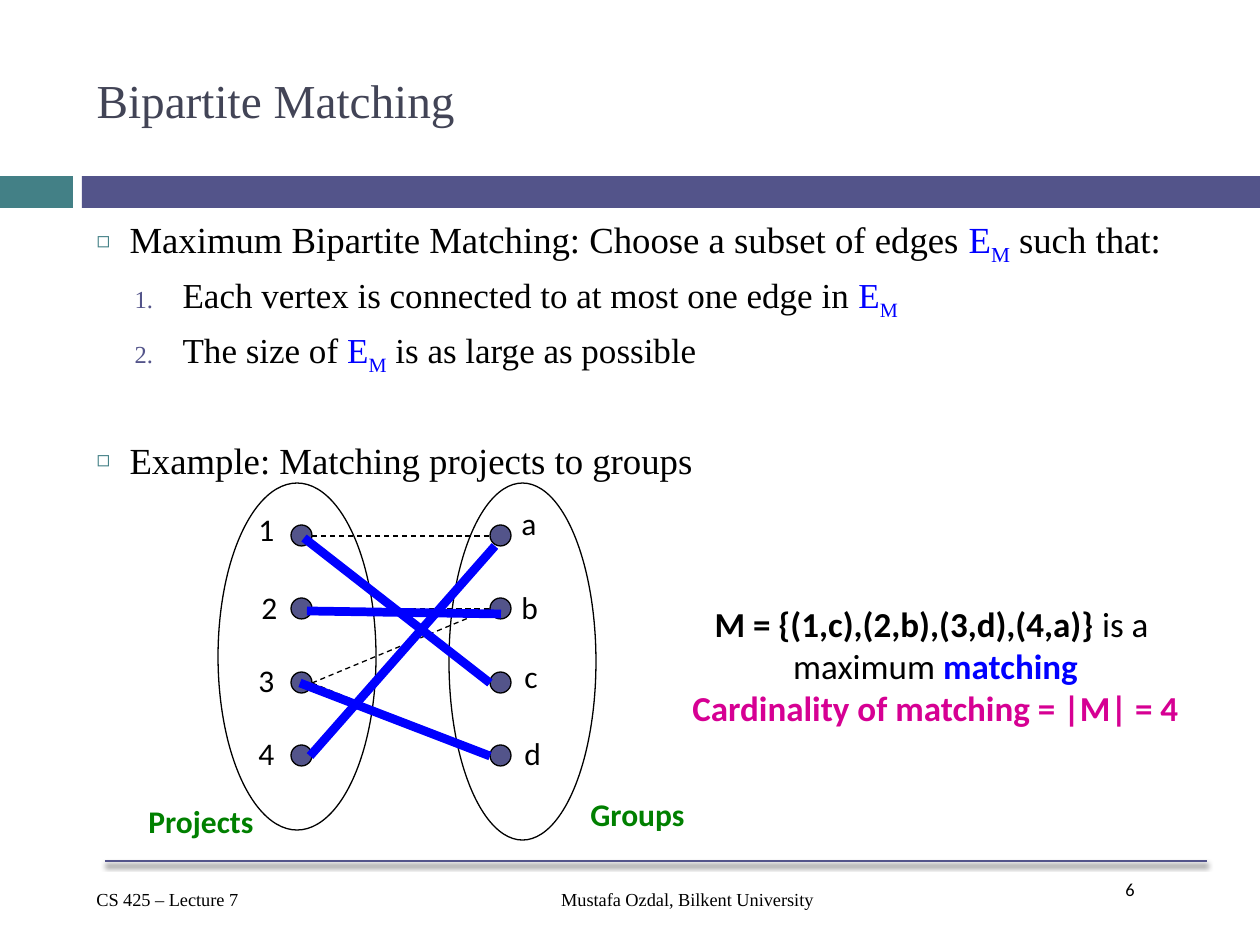
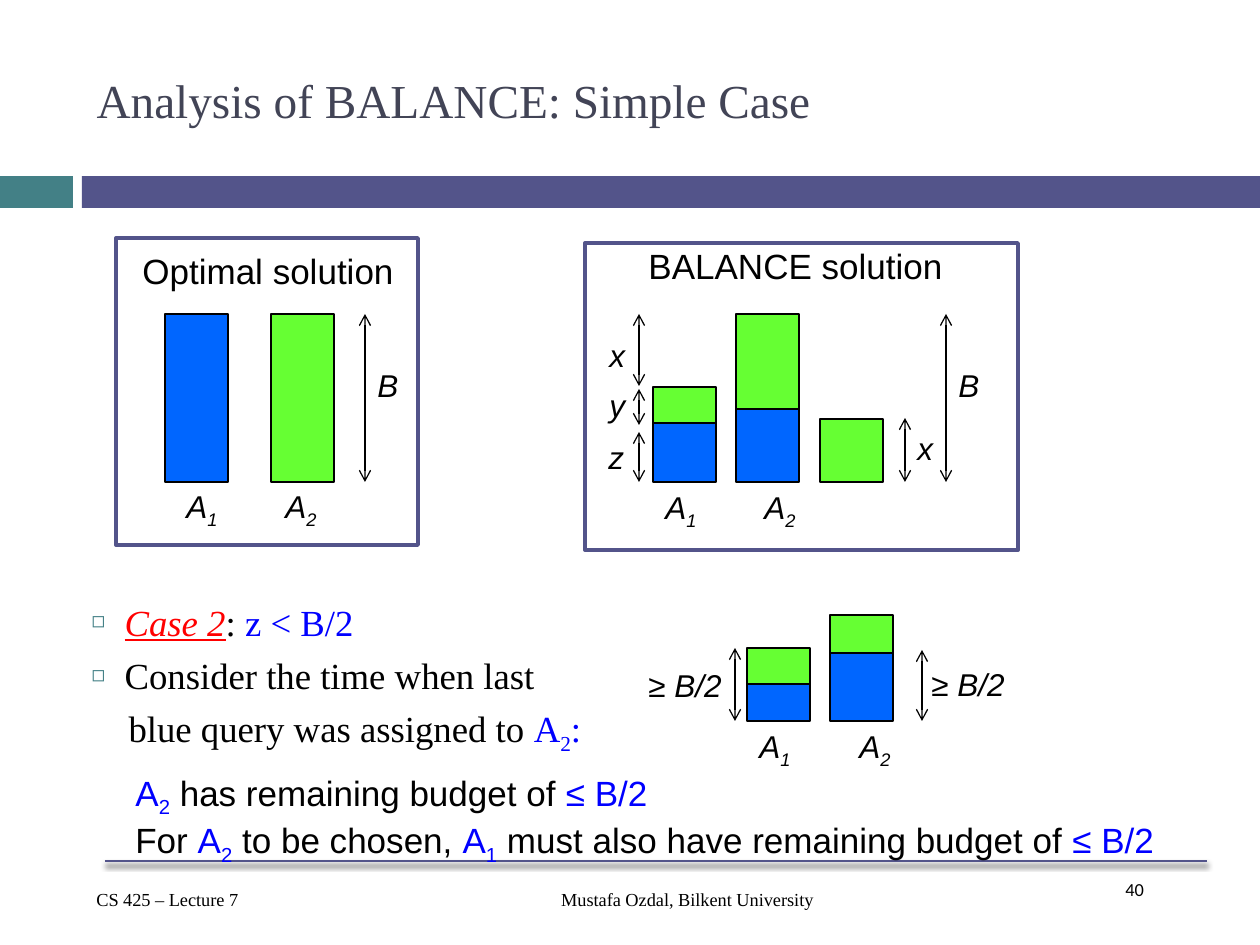
from dataclasses import dataclass
from typing import Any

from lxml import etree
from pptx import Presentation
from pptx import util as u
from pptx.dml.color import RGBColor
from pptx.enum import dml, shapes, text
from pptx.oxml import ns

PX = 914400 / 126
SERIF, SANS, LABEL = "Times New Roman", "Arial", "Calibri"
BLACK, INDIGO, TEAL, SLATE = "000000", "53548A", "438086", "424456"
BLUE, RED, DARK_GREEN, MAGENTA = "0000FF", "FF0000", "008000", "D60093"
BAR_BLUE, BAR_GREEN = "0066FF", "66FF33"
IN_BLUE = {"color": BLUE}
BLUE_SUB = {"color": BLUE, "sub": True}
BULLET = {"left": 33, "hang": 33, "before": 5.2, "size": 21, "mark": "◻"}
NUMBER = {"left": 86, "hang": 48, "before": 4.1, "size": 20, "level": 1}


def px(length):
    """Turn px into EMU."""
    return u.Emu(round(length * PX))


def rgb(code):
    """Turn a hex string into a colour."""
    return RGBColor.from_string(code)


def child(parent, tag, **attributes):
    """Append a DrawingML element to parent."""
    return etree.SubElement(parent, ns.qn("a:" + tag), attributes)


def add_runs(paragraph, runs, **base):
    """Add (words, style) runs, each style overriding the base style."""
    for words, style in runs:
        look = {"color": BLACK, **base, **style}
        run = paragraph.add_run()
        run.text = words
        run.font.name = look["font"]
        run.font.size = u.Pt(look["size"])
        run.font.color.rgb = rgb(look["color"])
        run.font.bold = look.get("bold", False)
        run.font.italic = look.get("italic", False)
        run.font.underline = look.get("underline", False)
        if look.get("sub"):
            run.font._element.set("baseline", "-25000")


def plain(words):
    """Make a single unstyled paragraph."""
    return [[(words, {})]]


@dataclass
class Region:
    """A part of a slide that places shapes relative to its corner."""
    slide: Any
    left: int
    top: int

    def place(self, x, y, width, height):
        """Give the EMU box of a part."""
        return px(self.left + x), px(self.top + y), px(width), px(height)

    def shape(self, kind, x, y, width, height, fill=None, line=None, weight=0.75):
        """Add a flat preset shape."""
        part = self.slide.shapes.add_shape(kind, *self.place(x, y, width, height))
        part.shadow.inherit = False
        if fill:
            part.fill.solid()
            part.fill.fore_color.rgb = rgb(fill)
        else:
            part.fill.background()
        if line:
            part.line.color.rgb = rgb(line)
            part.line.width = u.Pt(weight)
        else:
            part.line.fill.background()

    def line(self, x1, y1, x2, y2, color=BLACK, weight=0.75, dashed=False, arrows=False):
        """Add a straight line and return its effect list."""
        part = self.slide.shapes.add_connector(
            shapes.MSO_CONNECTOR.STRAIGHT, px(self.left + x1), px(self.top + y1),
            px(self.left + x2), px(self.top + y2))
        part.line.color.rgb = rgb(color)
        part.line.width = u.Pt(weight)
        if dashed:
            part.line.dash_style = dml.MSO_LINE.DASH
        if arrows:
            outline = part.line._get_or_add_ln()
            child(outline, "headEnd", type="arrow")
            child(outline, "tailEnd", type="arrow")
        return child(part._element.spPr, "effectLst")

    def text(self, x, y, width, height, paragraphs, align=text.PP_ALIGN.LEFT,
             wrap=False, **base):
        """Add a text box."""
        frame = self.slide.shapes.add_textbox(*self.place(x, y, width, height)).text_frame
        frame.word_wrap = wrap
        if not wrap:
            frame.auto_size = text.MSO_AUTO_SIZE.SHAPE_TO_FIT_TEXT
        for index, runs in enumerate(paragraphs):
            paragraph = frame.add_paragraph() if index else frame.paragraphs[0]
            paragraph.alignment = align
            add_runs(paragraph, runs, **base)

    def measure(self, x, top, bottom):
        """Add a vertical arrow with two heads."""
        self.line(x, top, x, bottom, arrows=True)

    def symbol(self, x, y, words, width=42):
        """Add an italic quantity."""
        self.text(x, y, width, 50, plain(words), font=SANS, size=18, italic=True)

    def advertisers(self, base, *lefts):
        """Label the bars A1, A2 below their base."""
        for number, x in enumerate(lefts, 1):
            self.text(x, base, 60, 50, [[("A", {}), (str(number), {"sub": True})]],
                      font=SANS, size=18, italic=True)

    def stack(self, x, base, blue=0, green=0):
        """Stand a blue bar on the base with a green one on top."""
        for height, bottom, fill in ((blue, base, BAR_BLUE), (green, base - blue, BAR_GREEN)):
            if height:
                self.shape(shapes.MSO_SHAPE.RECTANGLE, x, bottom - height, 63, height,
                           fill, BLACK)


def add_frame(prs, heading, page):
    """Add a slide with its title, bands and footer."""
    slide = prs.slides.add_slide(prs.slide_layouts[1])
    whole = Region(slide, 0, 0)
    whole.shape(shapes.MSO_SHAPE.RECTANGLE, 0, 176, 73, 32, TEAL)
    whole.shape(shapes.MSO_SHAPE.RECTANGLE, 82, 176, 1178, 32, INDIGO)
    effects = whole.line(105, 861, 1207, 861, INDIGO, 1.5)
    shadow = child(effects, "outerShdw", blurRad=str(u.Pt(3)), dist=str(u.Pt(2.4)),
                   dir="5400000", rotWithShape="0")
    child(child(shadow, "srgbClr", val=BLACK), "alpha", val="45000")
    whole.text(1113, 872, 94, 63, plain(page), wrap=True, font=LABEL, size=10.5)
    whole.text(84, 882, 231, 35, plain("CS 425 – Lecture 7"), wrap=True, font=SERIF, size=10.5)
    whole.text(325, 882, 725, 43, plain("Mustafa Ozdal, Bilkent University"),
               text.PP_ALIGN.CENTER, True, font=SERIF, size=10.5)
    title = slide.shapes.title
    title.left, title.top, title.width, title.height = whole.place(84, 32, 1124, 136)
    frame = title.text_frame
    frame.auto_size = text.MSO_AUTO_SIZE.NONE
    frame.vertical_anchor = text.MSO_ANCHOR.MIDDLE
    frame.paragraphs[0].alignment = text.PP_ALIGN.LEFT
    add_runs(frame.paragraphs[0], [(heading, {})], font=SERIF, size=27, color=SLATE)
    return slide


def fill_body(slide, box, items):
    """Move the body placeholder and write its (layout, runs) items."""
    body = slide.placeholders[1]
    body.left, body.top, body.width, body.height = map(px, box)
    frame = body.text_frame
    frame.auto_size = text.MSO_AUTO_SIZE.NONE
    for index, (rule, runs) in enumerate(items):
        paragraph = frame.add_paragraph() if index else frame.paragraphs[0]
        paragraph.level = rule.get("level", 0)
        paragraph.space_before = u.Pt(rule["before"])
        props = paragraph._p.get_or_add_pPr()
        props.set("marL", str(px(rule["left"])))
        props.set("indent", str(-px(rule["hang"])))
        numbered = paragraph.level == 1
        if rule["hang"]:
            child(child(props, "buClr"), "srgbClr", val=INDIGO if numbered else TEAL)
            child(props, "buSzPct", val="70000" if numbered else "60000")
        if numbered:
            child(props, "buFont", typeface="+mj-lt")
            child(props, "buAutoNum", type="arabicPeriod")
        elif rule["hang"]:
            child(props, "buChar", char=rule["mark"])
        else:
            child(props, "buNone")
        add_runs(paragraph, runs, font=SERIF, size=rule["size"])


def draw_matching(slide, left, top):
    """Draw projects, groups, possible edges and the chosen matching."""
    graph = Region(slide, left, top)
    rows = [42 + 147 * row // 2 for row in range(4)]
    possible = ((0, 0, 0, 0), (0, 2, 10, 0), (1, 1, 0, 0),
                (2, 1, 0, 0), (2, 3, 0, 0), (3, 0, 0, 11))
    chosen = ((168, 55, 354, 200), (171, 128, 365, 131),
              (164, 200, 354, 273), (174, 273, 359, 63))
    vertices = (("1", 110, 21), ("2", 113, 99), ("3", 110, 172), ("4", 110, 245),
                ("a", 373, 15), ("b", 373, 99), ("c", 376, 168), ("d", 376, 245))
    for project, group, drop, reach in possible:
        graph.line(176, rows[project] + 11 + drop, 354 + reach, rows[group] + 11, dashed=True)
    for x in (155, 354):
        for y in rows:
            graph.shape(shapes.MSO_SHAPE.OVAL, x, y, 21, 21, INDIGO, BLACK)
    for name, x, y in vertices:
        graph.text(x, y, 45, 50, plain(name), font=LABEL, size=18)
    graph.shape(shapes.MSO_SHAPE.OVAL, 82, 0, 158, 347, line=BLACK)
    graph.shape(shapes.MSO_SHAPE.OVAL, 313, 0, 147, 357, line=BLACK)
    for name, x, y, width in (("Projects", 0, 313, 135), ("Groups", 442, 306, 121)):
        graph.text(x, y, width, 50, plain(name), font=LABEL, size=18,
                   color=DARK_GREEN, bold=True)
    for edge in chosen:
        graph.line(*edge, BLUE, 5)


def draw_optimal(slide, left, top):
    """Draw the panel of the optimal solution."""
    panel = Region(slide, left, top)
    panel.shape(shapes.MSO_SHAPE.RECTANGLE, 0, 0, 302, 307, line=INDIGO, weight=2.25)
    panel.text(14, 5, 289, 55, plain("Optimal solution"), font=SANS, size=20)
    panel.stack(49, 244, blue=168)
    panel.stack(155, 244, green=168)
    panel.advertisers(243, 58, 157)
    panel.measure(249, 76, 244)
    panel.symbol(249, 122, "B", 47)


def draw_balance(slide, left, top):
    """Draw the panel of the BALANCE solution."""
    panel = Region(slide, left, top)
    panel.shape(shapes.MSO_SHAPE.RECTANGLE, 0, 0, 433, 307, line=INDIGO, weight=2.25)
    panel.text(51, -5, 333, 55, plain("BALANCE solution"), font=SANS, size=20)
    panel.stack(68, 239, blue=59, green=36)
    panel.stack(151, 239, blue=73, green=95)
    panel.stack(235, 239, green=63)
    panel.advertisers(239, 68, 167)
    for x, start, end in ((54, 71, 143), (54, 146, 182), (54, 189, 239),
                          (320, 175, 239), (361, 71, 239)):
        panel.measure(x, start, end)
    for words, x, y in (("x", 12, 87), ("y", 12, 137), ("z", 11, 189), ("x", 320, 180)):
        panel.symbol(x, y, words)
    panel.symbol(361, 117, "B", 47)


def draw_last_query(slide, left, top):
    """Draw the budgets when the last blue query is assigned."""
    budgets = Region(slide, left, top)
    budgets.stack(111, 106, blue=37, green=36)
    budgets.stack(194, 106, blue=68, green=38)
    budgets.advertisers(106, 111, 211)
    budgets.measure(99, 33, 106)
    budgets.measure(286, 35, 106)
    budgets.symbol(0, 45, "≥ B/2", 100)
    budgets.symbol(283, 44, "≥ B/2", 100)


def build_matching_slide(prs):
    """Build the slide on bipartite matching."""
    slide = add_frame(prs, "Bipartite Matching", "6")
    edge_set = [("E", IN_BLUE), ("M", BLUE_SUB)]
    fill_body(slide, (84, 210, 1124, 651), [
        (BULLET, [("Maximum Bipartite Matching: Choose a subset of edges ", {}),
                  *edge_set, (" such that:", {})]),
        (NUMBER, [("Each vertex is connected to at most one edge in ", {}), *edge_set]),
        (NUMBER, [("The size of ", {}), *edge_set, (" is as large as possible", {})]),
        ({**BULLET, "before": 35}, [("Example: Matching projects to groups", {})])])
    draw_matching(slide, 136, 483)
    Region(slide, 678, 596).text(0, 0, 515, 140, [
        [("M = {(1,c),(2,b),(3,d),(4,a)} ", {"bold": True}), ("is a ", {})],
        [("maximum ", {}), ("matching", {"color": BLUE, "bold": True})],
        [("Cardinality of matching = |M| = 4", {"color": MAGENTA, "bold": True})],
    ], text.PP_ALIGN.CENTER, font=LABEL, size=20)


def build_balance_slide(prs):
    """Build the slide on the simple case of BALANCE."""
    slide = add_frame(prs, "Analysis of BALANCE: Simple Case", "40")
    first, second = ([("A", IN_BLUE), (number, BLUE_SUB)] for number in "12")
    fill_body(slide, (79, 593, 568, 163), [
        (BULLET, [("Case 2", {"color": RED, "italic": True, "underline": True}),
                  (": ", {}), ("z < B/2", IN_BLUE)]),
        (BULLET, [("Consider the time when last", {})]),
        ({**BULLET, "left": 37, "hang": 0},
         [("blue query was assigned to ", {}), *second, (":", IN_BLUE)])])
    draw_optimal(slide, 116, 238)
    draw_balance(slide, 585, 243)
    draw_last_query(slide, 636, 615)
    Region(slide, 123, 765).text(0, 0, 1072, 97, [
        [*second, (" has remaining budget of ", {}), ("≤ B/2", IN_BLUE)],
        [("For ", {}), *second, (" to be chosen, ", {}), *first,
         (" must also have remaining budget of ", {}), ("≤ B/2", IN_BLUE)],
    ], font=SANS, size=20)


def main():
    """Build and save the presentation."""
    prs = Presentation()
    prs.slide_width, prs.slide_height = u.Inches(10), u.Inches(7.5)
    build_matching_slide(prs)
    build_balance_slide(prs)
    prs.save("out.pptx")


if __name__ == "__main__":
    main()
